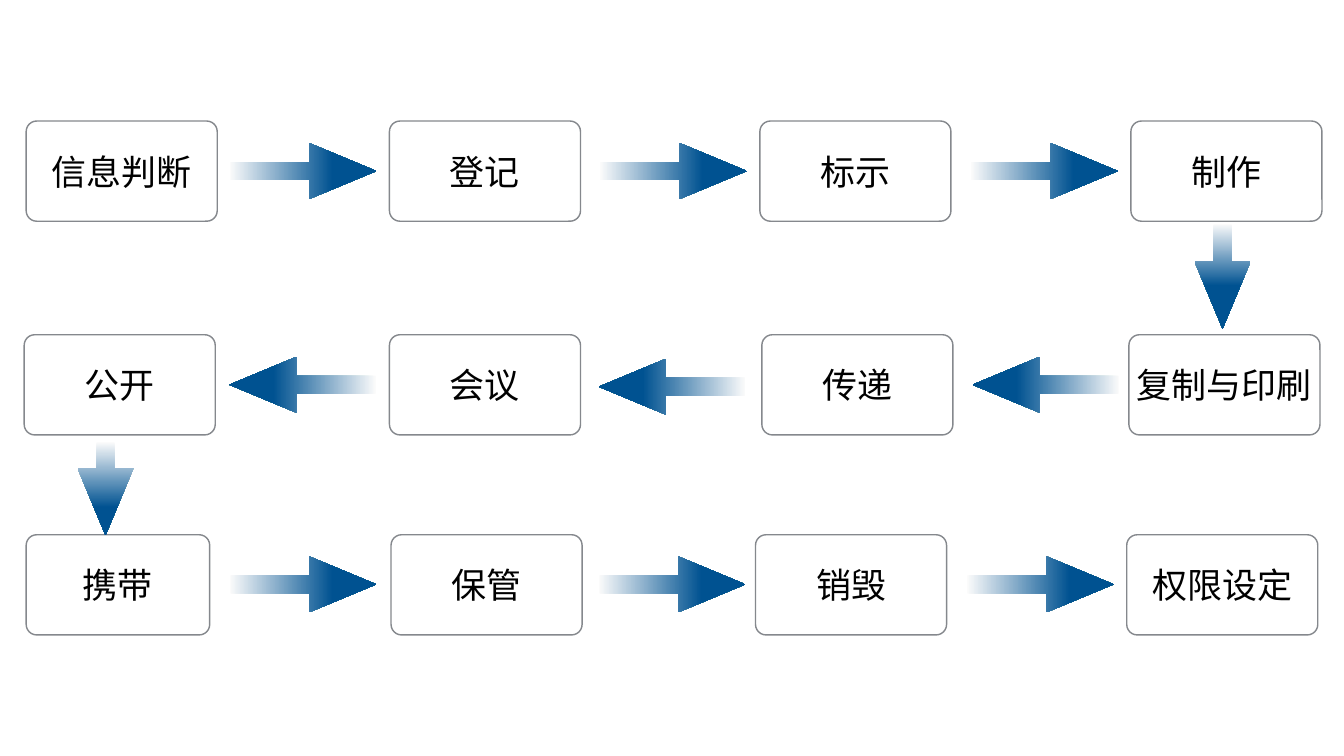
from lxml import etree
from pptx import Presentation
from pptx import util as u
from pptx.dml import color
from pptx.enum import shapes, text
from pptx.oxml import ns

BOX_WIDTH, BOX_HEIGHT = 9.63, 5.05
ARROW_LENGTH, ARROW_HEIGHT = 7.39, 2.82

# top of the row, steps with their lefts, arrows (left, top), pointing left
ROWS = [
    (6.1, [("信息判断", 1.32), ("登记", 19.63), ("标示", 38.3), ("制作", 57)],
     [(11.58, 7.21), (30.25, 7.21), (48.95, 7.21)], False),
    (16.87, [("公开", 1.22), ("会议", 19.63), ("传递", 38.4), ("复制与印刷", 56.9)],
     [(11.56, 17.98), (30.18, 18.08), (49.02, 17.98)], True),
    (26.95, [("携带", 1.32), ("保管", 19.71), ("销毁", 38.08), ("权限设定", 56.79)],
     [(11.58, 28.04), (30.18, 28.04), (48.74, 28.04)], False),
]
NARROW_BOXES = {"携带": 9.25}


def rgb(value):
    return color.RGBColor.from_string(value)


class FlowSlide:
    font = "Noto Sans CJK SC"
    font_size = u.Pt(50)
    text_color = "000000"
    border = "85888D"
    arrow_start, arrow_end = "FBFBFB", "005291"

    def __init__(self, slide):
        self.slide = slide

    def shape(self, kind, left, top, width, height):
        shape = self.slide.shapes.add_shape(
            kind, u.Cm(left), u.Cm(top), u.Cm(width), u.Cm(height))
        shape.shadow.inherit = False
        return shape

    def box(self, label, left, top, width=BOX_WIDTH):
        shape = self.shape(shapes.MSO_SHAPE.ROUNDED_RECTANGLE,
                           left, top, width, BOX_HEIGHT)
        shape.adjustments[0] = 0.105
        shape.fill.background()
        shape.line.color.rgb = rgb(self.border)
        shape.line.width = u.Pt(2)
        self.label(shape.text_frame, label)

    def label(self, frame, label):
        frame.text = label
        frame.word_wrap = True
        frame.vertical_anchor = text.MSO_ANCHOR.MIDDLE
        frame.margin_left = frame.margin_right = u.Cm(0.1)
        frame.margin_top = frame.margin_bottom = u.Cm(0.1)
        paragraph = frame.paragraphs[0]
        paragraph.alignment = text.PP_ALIGN.CENTER
        run = paragraph.runs[0]
        run.font.size = self.font_size
        run.font.color.rgb = rgb(self.text_color)
        run.font.name = self.font
        east_asian = etree.SubElement(run._r.get_or_add_rPr(), ns.qn("a:ea"))
        east_asian.set("typeface", self.font)

    def arrow(self, left, top, length=ARROW_LENGTH, flipped=False,
              rotation=0, full_color_at=0.7):
        shape = self.shape(shapes.MSO_SHAPE.RIGHT_ARROW,
                           left, top, length, ARROW_HEIGHT)
        shape.adjustments[0] = 0.32
        shape.adjustments[1] = 1.2
        shape.rotation = rotation
        if flipped:
            shape._element.spPr.get_or_add_xfrm().set("flipH", "1")
        shape.line.fill.background()
        shape.fill.gradient()
        shape.fill.gradient_angle = 0
        start, end = shape.fill.gradient_stops
        start.color.rgb, start.position = rgb(self.arrow_start), 0
        end.color.rgb, end.position = rgb(self.arrow_end), full_color_at

    def down_arrow(self, left, top, length, full_color_at=0.7):
        """Left and top are those of the arrow before it is turned."""
        self.arrow(left, top, length, True, 270, full_color_at)


def main():
    presentation = Presentation()
    presentation.slide_width = u.Cm(67.74)
    presentation.slide_height = u.Cm(38.1)
    flow = FlowSlide(presentation.slides.add_slide(presentation.slide_layouts[6]))

    for top, steps, arrows, leftward in ROWS:
        for label, left in steps:
            flow.box(label, left, top, NARROW_BOXES.get(label, BOX_WIDTH))
        for arrow_left, arrow_top in arrows:
            flow.arrow(arrow_left, arrow_top, flipped=leftward)

    flow.down_arrow(58.98, 12.52, 5.28, full_color_at=0.59)
    flow.down_arrow(2.97, 23.22, 4.7)
    presentation.save("out.pptx")


if __name__ == "__main__":
    main()
